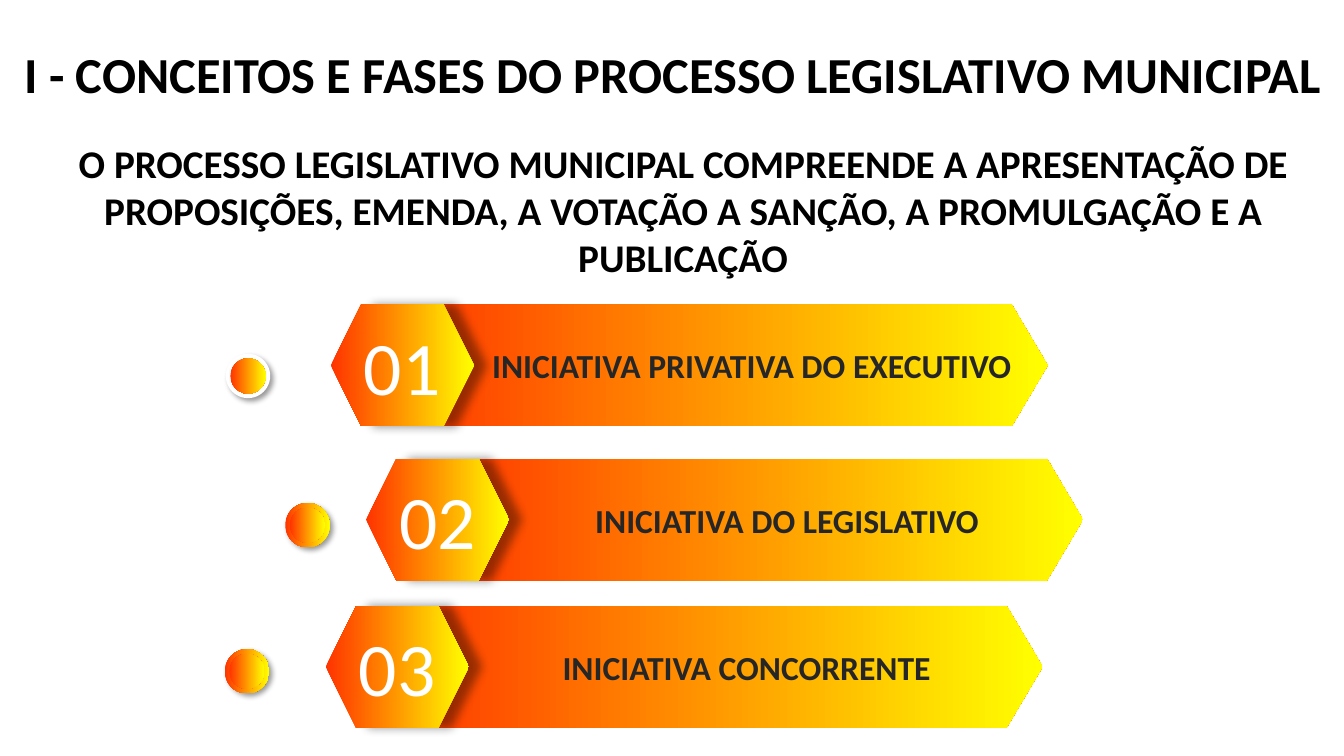
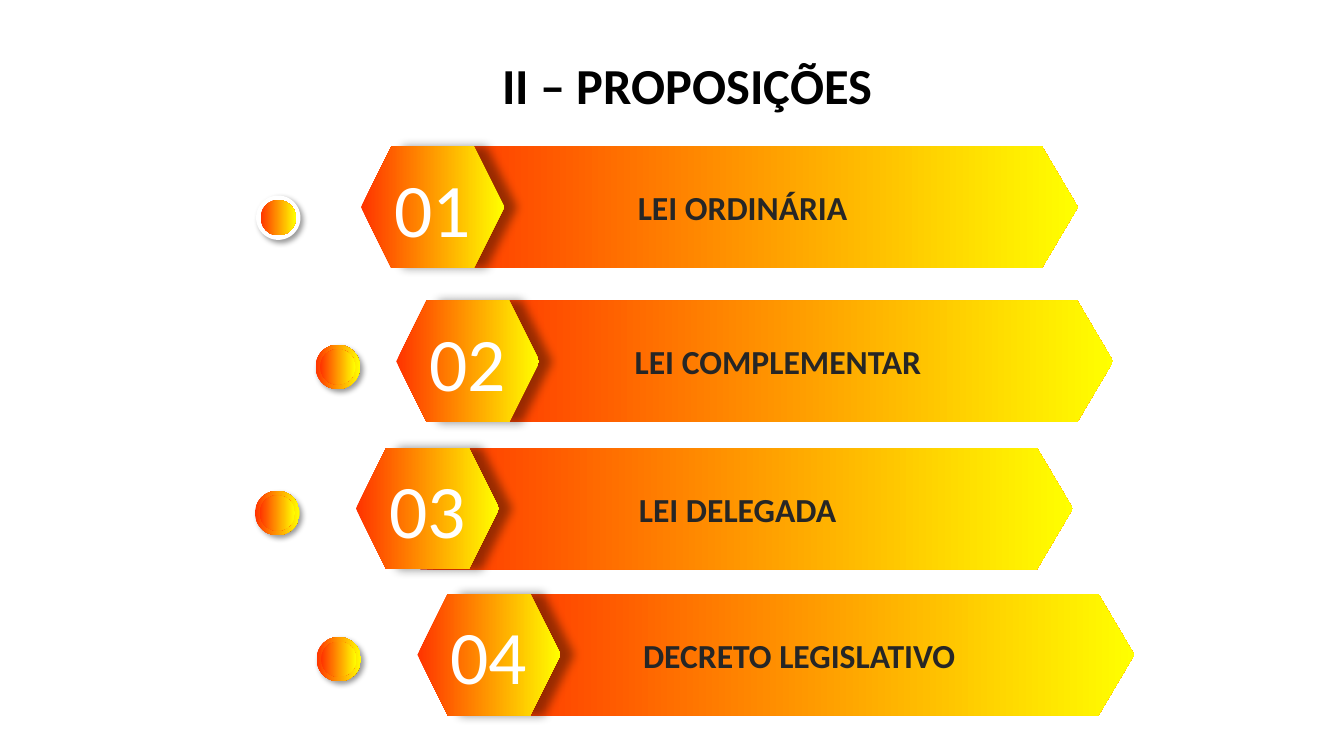
"""Builds two slides of numbered banners on the municipal legislative process."""
from lxml.etree import SubElement
from pptx import Presentation
from pptx.dml.color import RGBColor
from pptx.enum.shapes import MSO_SHAPE
from pptx.enum.text import MSO_ANCHOR, MSO_AUTO_SIZE, PP_ALIGN
from pptx.oxml.ns import qn
from pptx.util import Emu, Inches, Pt

SLIDE_SIZE = (13.33, 7.5)
FONT = "Calibri"
BLACK, CHARCOAL, WHITE = "000000", "262626", "FFFFFF"
GLOW = ("FF3300", "FFFF00")

HEXAGON_SIZE = (1.42, 1.21)
BANNER_SIZE = (6.47, 1.21)
BANNER_SHIFT = 0.64
DOT, CORE = 0.44, 0.35
DOT_SHADOW = {"blur": 4, "distance": 3, "angle": 45}
HEXAGON_SHADOW = {"blur": 7, "distance": 9, "angle": 0}

STEPS = [
    {"hexagon": (0, 0), "dot": (-1.04, 0.49), "ring": WHITE},
    {"hexagon": (0.35, 1.53), "dot": (-0.45, 1.97), "ring": GLOW},
    {"hexagon": (-0.05, 2.99), "dot": (-1.05, 3.42), "ring": GLOW},
    {"hexagon": (0.56, 4.44), "dot": (-0.44, 4.87), "ring": GLOW},
]

SLIDES = [
    {
        "title": "I - CONCEITOS E FASES DO PROCESSO LEGISLATIVO MUNICIPAL",
        "title_box": (0.14, 0.38, 13.19, 0.71),
        "title_format": {},
        "statement": "O PROCESSO LEGISLATIVO MUNICIPAL COMPREENDE A APRESENTAÇÃO DE "
                     "PROPOSIÇÕES, EMENDA, A VOTAÇÃO A SANÇÃO, A PROMULGAÇÃO E A PUBLICAÇÃO",
        "origin": (3.28, 3.02),
        "indent": 0.78,
        "labels": ["INICIATIVA PRIVATIVA DO EXECUTIVO", "INICIATIVA DO LEGISLATIVO",
                   "INICIATIVA CONCORRENTE"],
    },
    {
        "title": "II – PROPOSIÇÕES",
        "title_box": (4.88, 0.4, 3.91, 0.76),
        "title_format": {"line_spacing": 1.15, "space_after": Pt(10)},
        "statement": None,
        "origin": (3.58, 1.45),
        "indent": 0,
        "labels": ["LEI ORDINÁRIA", "LEI COMPLEMENTAR", "LEI DELEGADA", "DECRETO LEGISLATIVO"],
    },
]
STATEMENT_BOX = (0.4, 1.33, 12.75, 1.51)


def color(code):
    return RGBColor.from_string(code)


def shifted(origin, offset):
    return origin[0] + offset[0], origin[1] + offset[1]


def write(frame, text, size, ink, bold=True, align=PP_ALIGN.CENTER, anchor=MSO_ANCHOR.MIDDLE):
    frame.word_wrap = True
    frame.auto_size = MSO_AUTO_SIZE.NONE
    frame.vertical_anchor = anchor
    paragraph = frame.paragraphs[0]
    paragraph.alignment = align
    run = paragraph.add_run()
    run.text = text
    run.font.name, run.font.size, run.font.bold = FONT, Pt(size), bold
    run.font.color.rgb = color(ink)
    return paragraph


def paint(shape, fill):
    if isinstance(fill, str):
        shape.fill.solid()
        shape.fill.fore_color.rgb = color(fill)
        return
    shape.fill.gradient()
    shape.fill.gradient_angle = 0
    for stop, code, position in zip(shape.fill.gradient_stops, fill, (0, 1)):
        stop.color.rgb = color(code)
        stop.position = position


def cast_shadow(shape, blur, distance, angle):
    effects = shape._element.spPr.find(qn("a:effectLst"))
    outer = SubElement(effects, qn("a:outerShdw"), blurRad=str(Pt(blur)), dist=str(Pt(distance)),
                       dir=str(angle * 60000), algn="tl", rotWithShape="0")
    tint = SubElement(outer, qn("a:srgbClr"), val=BLACK)
    SubElement(tint, qn("a:alpha"), val="40000")


def add_figure(shapes, preset, corner, size, fill, shadow=None):
    figure = shapes.add_shape(preset, *map(Inches, (*corner, *size)))
    figure.shadow.inherit = False
    paint(figure, fill)
    figure.line.fill.background()
    if shadow:
        cast_shadow(figure, **shadow)
    return figure


def add_dot(slide, corner, ring):
    shapes = slide.shapes.add_group_shape().shapes
    inset = (DOT - CORE) / 2
    add_figure(shapes, MSO_SHAPE.OVAL, corner, (DOT, DOT), ring, DOT_SHADOW)
    add_figure(shapes, MSO_SHAPE.OVAL, shifted(corner, (inset, inset)), (CORE, CORE), GLOW)


def add_banner(slide, corner, number, label, indent):
    banner = add_figure(slide.shapes, MSO_SHAPE.PENTAGON, shifted(corner, (BANNER_SHIFT, 0)),
                        BANNER_SIZE, GLOW)
    banner.adjustments[0] = 0.295
    paragraph = write(banner.text_frame, label, 24, CHARCOAL)
    if indent:
        paragraph._p.get_or_add_pPr().set("marL", str(Inches(indent)))
    hexagon = add_figure(slide.shapes, MSO_SHAPE.HEXAGON, corner, HEXAGON_SIZE, GLOW,
                         HEXAGON_SHADOW)
    write(hexagon.text_frame, f"{number:02d}", 54, WHITE, bold=False)


def add_title(slide, content):
    title = slide.shapes.title
    title.left, title.top, title.width, title.height = map(Inches, content["title_box"])
    paragraph = write(title.text_frame, content["title"], 36, BLACK,
                      align=PP_ALIGN.LEFT, anchor=MSO_ANCHOR.TOP)
    for attribute, value in content["title_format"].items():
        setattr(paragraph, attribute, value)


def build_slide(deck, content):
    slide = deck.slides.add_slide(deck.slide_layouts[5])
    add_title(slide, content)
    if content["statement"]:
        statement = slide.shapes.add_textbox(*map(Inches, STATEMENT_BOX))
        write(statement.text_frame, content["statement"], 28, BLACK, anchor=MSO_ANCHOR.TOP)
    for number, (label, step) in enumerate(zip(content["labels"], STEPS), 1):
        add_dot(slide, shifted(content["origin"], step["dot"]), step["ring"])
        add_banner(slide, shifted(content["origin"], step["hexagon"]), number, label,
                   content["indent"])


def main():
    deck = Presentation()
    deck.slide_width, deck.slide_height = map(Inches, SLIDE_SIZE)
    for content in SLIDES:
        build_slide(deck, content)
    deck.save("out.pptx")


if __name__ == "__main__":
    main()
